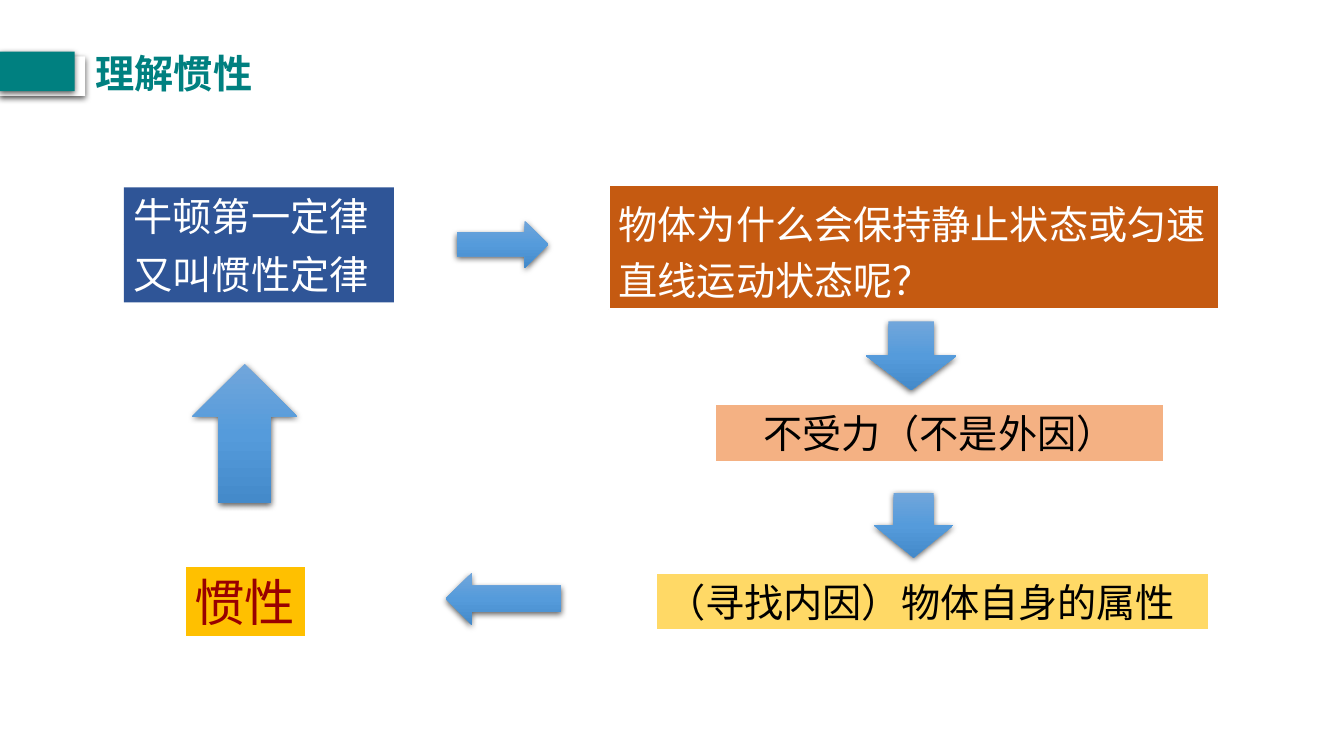
import pptx
import pptx.util
import pptx.dml.color
import pptx.enum.shapes
import pptx.enum.text
import pptx.oxml
import pptx.oxml.ns
from dataclasses import dataclass

Cm = pptx.util.Cm
Pt = pptx.util.Pt
Kind = pptx.enum.shapes.MSO_SHAPE
Align = pptx.enum.text.PP_ALIGN
Anchor = pptx.enum.text.MSO_ANCHOR
NS = pptx.oxml.ns.nsdecls("a")


@dataclass(frozen=True)
class Theme:
    font: str = "Noto Sans CJK SC"
    body: int = 28
    large: int = 36
    white: str = "FFFFFF"
    black: str = "000000"
    teal: str = "008080"
    blue: str = "2F5597"
    rust: str = "C55A11"
    peach: str = "F4B183"
    cream: str = "FFD966"
    gold: str = "FFC000"
    red: str = "990000"
    blend: tuple = ((0, "71A6DB"), (50, "559BDB"), (100, "448ACA"))


theme = Theme()


def color(value):
    return pptx.dml.color.RGBColor.from_string(value)


def apply(target, values):
    for name, value in values.items():
        setattr(target, name, value)


def shape(slide, kind, place, fill=None, edge=None):
    item = slide.shapes.add_shape(kind, *map(Cm, place))
    item.shadow.inherit = False
    if fill:
        item.fill.solid()
        item.fill.fore_color.rgb = color(fill)
    if edge:
        item.line.color.rgb = color(edge)
        item.line.width = Pt(1.5)
    else:
        item.line.fill.background()
    return item


def shade(item):
    effects = item._element.spPr.find(pptx.oxml.ns.qn("a:effectLst"))
    effects.append(pptx.oxml.parse_xml(
        f'<a:outerShdw {NS} blurRad="{Pt(4.5)}" dist="{Pt(1.5)}" dir="5400000" '
        f'algn="ctr" rotWithShape="0"><a:srgbClr val="{theme.black}">'
        '<a:alpha val="63000"/></a:srgbClr></a:outerShdw>'))


def arrow(slide, kind, place):
    item = shape(slide, kind, place)
    stops = "".join(f'<a:gs pos="{pos * 1000}"><a:srgbClr val="{tint}"/></a:gs>'
                    for pos, tint in theme.blend)
    line = item._element.spPr.find(pptx.oxml.ns.qn("a:ln"))
    line.addprevious(pptx.oxml.parse_xml(
        f'<a:gradFill {NS} rotWithShape="1"><a:gsLst>{stops}</a:gsLst>'
        '<a:lin ang="5400000" scaled="0"/></a:gradFill>'))
    shade(item)


def write(item, text, ink, size=theme.body, bold=False, align=Align.LEFT, space=1.0, wrap=True):
    frame = item.text_frame
    apply(frame, {"word_wrap": wrap, "vertical_anchor": Anchor.MIDDLE})
    para = frame.paragraphs[0]
    apply(para, {"alignment": align, "line_spacing": space})
    run = para.add_run()
    run.text = text
    apply(run.font, {"name": theme.font, "size": Pt(size), "bold": bold})
    run.font.color.rgb = color(ink)
    run._r.rPr.append(pptx.oxml.parse_xml(f'<a:ea {NS} typeface="{theme.font}"/>'))


def box(slide, place, fill, text, ink, edge=theme.white, **style):
    write(shape(slide, Kind.RECTANGLE, place, fill, edge), text, ink, **style)


def header(slide, text):
    for place, fill in (((0, 1.42, 2.15, 1), theme.white), ((0, 1.3, 1.88, 1), theme.teal)):
        shade(shape(slide, Kind.RECTANGLE, place, fill))
    title = slide.shapes.add_textbox(*map(Cm, (2.16, 1.12, 9.5, 1.45)))
    write(title, text, theme.teal, bold=True)


def main():
    deck = pptx.Presentation()
    apply(deck, {"slide_width": Cm(33.87), "slide_height": Cm(19.05)})
    slide = deck.slides.add_slide(deck.slide_layouts[6])
    header(slide, "理解惯性")
    for row, text in enumerate(("牛顿第一定律", "又叫惯性定律")):
        box(slide, (3.12, 4.72 + row * 1.45, 6.81, 1.45), theme.blue, text, theme.white, edge=None)
    box(slide, (15.34, 4.67, 15.39, 3.12), theme.rust,
        "物体为什么会保持静止状态或匀速直线运动状态呢？", theme.white, space=1.2)
    box(slide, (18.01, 10.19, 11.33, 1.45), theme.peach,
        "不受力（不是外因）", theme.black, align=Align.CENTER)
    box(slide, (16.54, 14.43, 13.92, 1.45), theme.cream,
        "（寻找内因）物体自身的属性", theme.black)
    box(slide, (4.65, 14.25, 3.07, 1.8), theme.gold, "惯性", theme.red,
        size=theme.large, wrap=False)
    for kind, place in (
        (Kind.RIGHT_ARROW, (11.51, 5.56, 2.31, 1.19)),
        (Kind.DOWN_ARROW, (21.82, 8.1, 2.29, 1.73)),
        (Kind.DOWN_ARROW, (22.02, 12.42, 2.01, 1.63)),
        (Kind.LEFT_ARROW, (11.23, 14.43, 2.92, 1.32)),
        (Kind.UP_ARROW, (4.85, 9.17, 2.64, 3.51)),
    ):
        arrow(slide, kind, place)
    deck.save("out.pptx")


if __name__ == "__main__":
    main()
